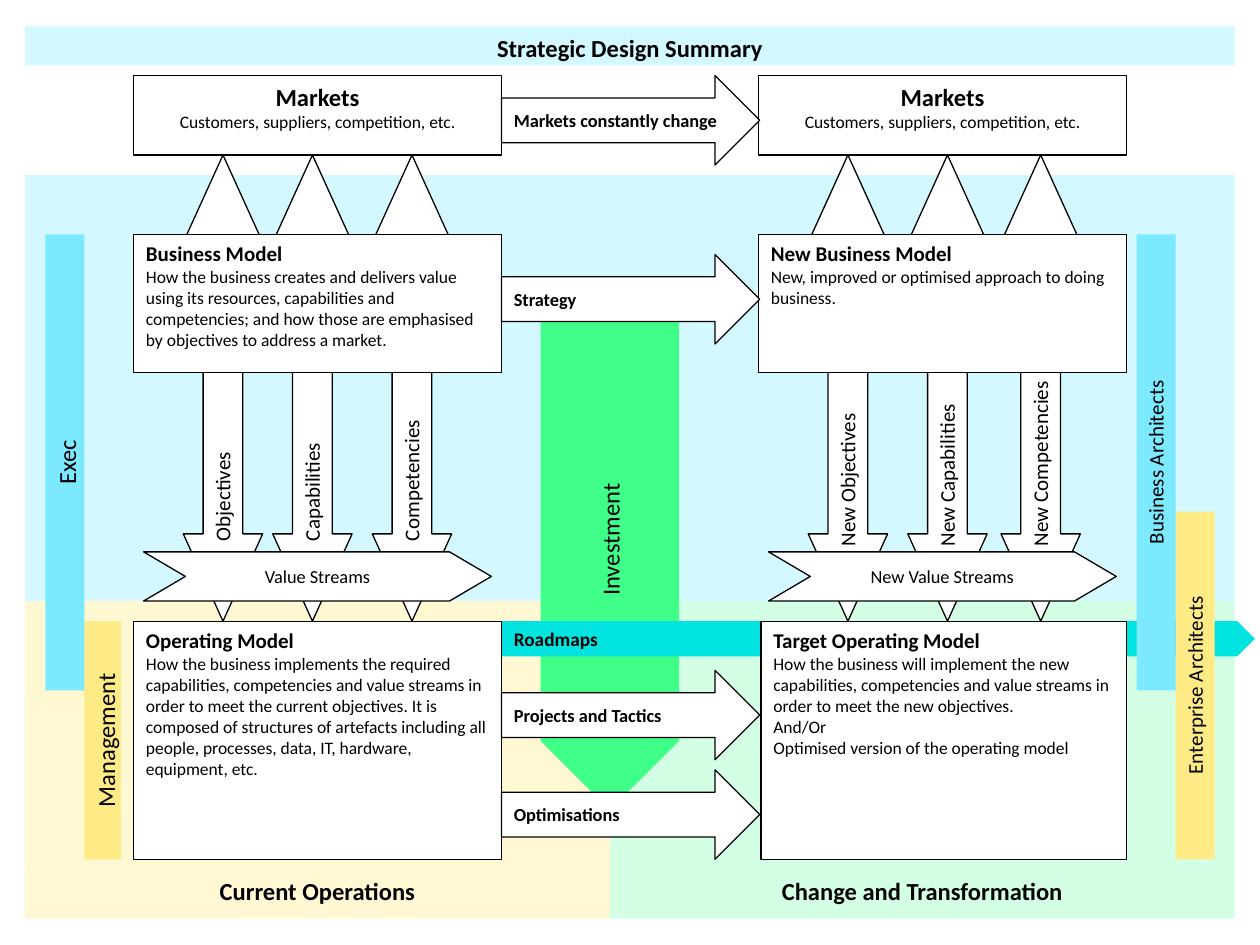
from pptx import Presentation
from pptx.dml.color import RGBColor
from pptx.enum.shapes import MSO_SHAPE as Shape
from pptx.enum.text import MSO_ANCHOR as Anchor, PP_ALIGN as Align
from pptx.util import Inches, Pt

COLORS = {
    "ink": "000000", "white": "FFFFFF",
    "sky": "D3F8FF", "cream": "FFF8D3", "mint": "D3FFE4",
    "blue": "7DE9FF", "yellow": "FFEB85", "green": "3FFF88", "teal": "00E3DE",
}
FONT = "Calibri"


def color(name):
    return RGBColor.from_string(COLORS[name])


def add_block(page, kind, box, fill, outlined=False, upright=False):
    """Draw a preset shape in box (left, top, width, height as seen).

    An upright block is turned so that its text reads from bottom to top.
    """
    left, top, width, height = box
    if upright:
        left, top = left + (width - height) / 2, top + (height - width) / 2
        width, height = height, width
    shape = page.shapes.add_shape(
        kind, Inches(left), Inches(top), Inches(width), Inches(height))
    if upright:
        shape.rotation = 270
    shape.shadow.inherit = False
    shape.fill.solid()
    shape.fill.fore_color.rgb = color(fill)
    if outlined:
        shape.line.color.rgb = color("ink")
        shape.line.width = Pt(0.75)
    else:
        shape.line.fill.background()
    return shape


def write(shape, text, size, bold=False, align=Align.LEFT, anchor=Anchor.TOP):
    frame = shape.text_frame
    frame.word_wrap = True
    frame.vertical_anchor = anchor
    para = frame.paragraphs[0]
    para.alignment = align
    para.font.name = FONT
    para.font.size = Pt(size)
    para.font.bold = bold
    para.font.color.rgb = color("ink")
    if text:
        para.add_run().text = text
    return para


def add_banner(page, box, fill, text):
    banner = add_block(page, Shape.RECTANGLE, box, fill)
    write(banner, text, 14, bold=True, align=Align.CENTER)


def add_card(page, box, title, lines, title_size=12, align=Align.LEFT):
    """A white box with a bold title above lines of small text."""
    card = add_block(page, Shape.RECTANGLE, box, "white", outlined=True)
    para = write(card, "", 10, align=align)
    heading = para.add_run()
    heading.text = title
    heading.font.size = Pt(title_size)
    heading.font.bold = True
    for line in lines:
        para.add_line_break()
        para.add_run().text = line


def add_backdrop(page, box):
    left, top, width, height = box
    split, base, footer = 4.64, 3.38, 0.39
    add_block(page, Shape.RECTANGLE, (left, top, width, base), "sky")
    zones = [(0, split, "cream", "Current Operations"),
             (split, width - split, "mint", "Change and Transformation")]
    for offset, zone_width, fill, text in zones:
        x = left + offset
        add_block(page, Shape.RECTANGLE,
                  (x, top + base, zone_width, height - base - footer), fill)
        add_banner(page, (x, top + height - footer, zone_width, footer),
                   fill, text)


def add_investment(page, box):
    arrow = add_block(page, Shape.PENTAGON, box, "green", upright=True)
    arrow.element.spPr.xfrm.set("flipH", "1")
    write(arrow, "Investment", 14, align=Align.CENTER, anchor=Anchor.MIDDLE)


def add_roadmap(page, box):
    band = add_block(page, Shape.PENTAGON, box, "teal")
    write(band, "Roadmaps", 11, bold=True)


def add_column(page, box, drivers, label_inset, streams, business, operating,
               operating_offset=0):
    """Markets, business model and operating model, tied by driver arrows.

    Each driver is a label and the distance of its arrow from the left edge.
    """
    left, top, width, height = box
    shaft_top, shaft_width, operating_top = 0.63, 0.63, 4.33
    for label, center in drivers:
        shaft = add_block(
            page, Shape.LEFT_RIGHT_ARROW,
            (left + center - shaft_width / 2, top + shaft_top,
             shaft_width, operating_top - shaft_top),
            "white", outlined=True, upright=True)
        shaft.adjustments[1] = 1.1
        shaft.text_frame.margin_left = Inches(label_inset)
        write(shaft, label, 12)

    chevron = add_block(page, Shape.CHEVRON,
                        (left + 0.08, top + 3.78, 2.76, 0.39),
                        "white", outlined=True)
    chevron.adjustments[0] = 0.85
    write(chevron, streams, 10.5, align=Align.CENTER, anchor=Anchor.MIDDLE)

    add_card(page, (left, top, width, shaft_top), "Markets",
             ["Customers, suppliers, competition, etc."],
             title_size=14, align=Align.CENTER)
    add_card(page, (left, top + 1.26, width, 1.1), *business)
    add_card(page, (left + operating_offset, top + operating_top,
                    width - operating_offset, height - operating_top),
             *operating)


def add_transitions(page, box):
    left, top, width, height = box
    arrows = [("Markets constantly change", 0), ("Strategy", 1.42),
              ("Projects and Tactics", 4.72), ("Optimisations", 5.51)]
    for text, offset in arrows:
        arrow = add_block(page, Shape.RIGHT_ARROW,
                          (left, top + offset, width, height),
                          "white", outlined=True)
        write(arrow, text, 10.5, bold=True, anchor=Anchor.MIDDLE)


def add_role(page, box, fill, text, size):
    bar = add_block(page, Shape.RECTANGLE, box, fill, upright=True)
    write(bar, text, size, align=Align.CENTER)


def main():
    deck = Presentation()
    deck.slide_width, deck.slide_height = Inches(10), Inches(7.5)
    page = deck.slides.add_slide(deck.slide_layouts[6])

    add_backdrop(page, (0.2, 1.39, 9.6, 5.9))
    add_banner(page, (0.2, 0.21, 9.6, 0.31), "sky", "Strategic Design Summary")
    add_investment(page, (4.29, 2.41, 1.1, 4.02))
    add_roadmap(page, (3.98, 4.93, 5.98, 0.28))

    add_column(
        page, (1.06, 0.6, 2.92, 6.22),
        [("Objectives", 0.71), ("Capabilities", 1.42), ("Competencies", 2.21)],
        0.29, "Value Streams",
        ("Business Model",
         ["How the business creates and delivers value using its resources, "
          "capabilities and competencies; and how those are emphasised by "
          "objectives to address a market."]),
        ("Operating Model",
         ["How the business implements the required capabilities, "
          "competencies and value streams in order to meet the current "
          "objectives. It is composed of structures of artefacts including "
          "all people, processes, data, IT, hardware, equipment, etc."]))
    add_column(
        page, (6.02, 0.6, 2.92, 6.22),
        [("New Objectives", 0.71), ("New Capabilities", 1.5),
         ("New Competencies", 2.24)],
        0.25, "New Value Streams",
        ("New Business Model",
         ["New, improved or optimised approach to doing business."]),
        ("Target Operating Model",
         ["How the business will implement the new capabilities, "
          "competencies and value streams in order to meet the new "
          "objectives.",
          "And/Or",
          "Optimised version of the operating model"]),
        operating_offset=0.02)
    add_transitions(page, (3.98, 0.6, 2.05, 0.71))

    add_role(page, (0.67, 4.93, 0.29, 1.89), "yellow", "Management", 14)
    add_role(page, (9.33, 4.06, 0.31, 2.76), "yellow",
             "Enterprise Architects", 12)
    add_role(page, (9.02, 1.86, 0.31, 3.62), "blue", "Business Architects", 12)
    add_role(page, (0.36, 1.86, 0.31, 3.62), "blue", "Exec", 14)

    deck.save("out.pptx")


if __name__ == "__main__":
    main()
